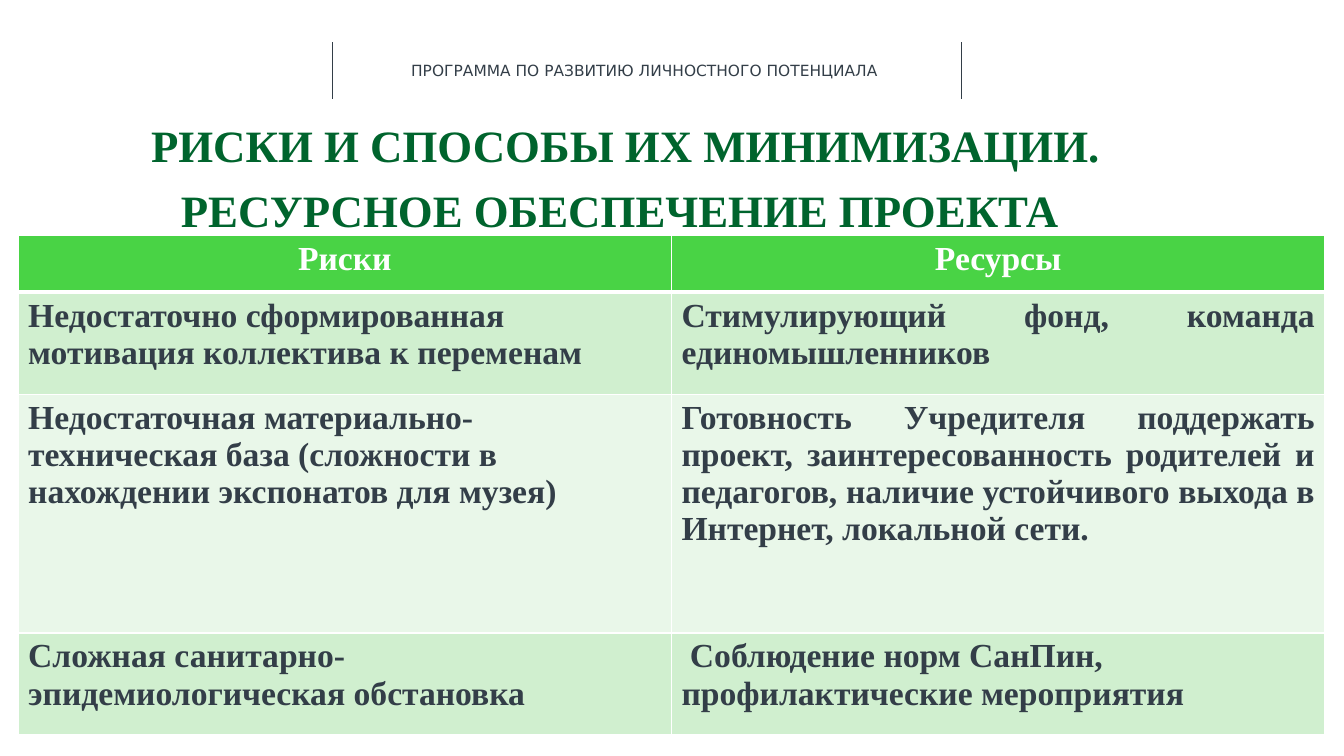
from lxml import etree
from pptx import Presentation
from pptx.dml.color import RGBColor
from pptx.enum.shapes import MSO_CONNECTOR
from pptx.enum.text import PP_ALIGN as Align
from pptx.oxml import parse_xml
from pptx.oxml.ns import nsdecls, qn
from pptx.util import Inches, Pt

SLATE = RGBColor(0x33, 0x3E, 0x48)
DARK_GREEN = RGBColor(0x00, 0x64, 0x2D)
HEADER_GREEN = RGBColor(0x49, 0xD3, 0x45)
BAND_GREEN = RGBColor(0xD0, 0xEF, 0xCF)
PALE_GREEN = RGBColor(0xE9, 0xF7, 0xE9)
WHITE = RGBColor(0xFF, 0xFF, 0xFF)

SERIF = "Times New Roman"
SANS = "DejaVu Sans"

PROGRAM = "ПРОГРАММА ПО РАЗВИТИЮ ЛИЧНОСТНОГО ПОТЕНЦИАЛА"
TITLE = ["РИСКИ И СПОСОБЫ ИХ МИНИМИЗАЦИИ.", "РЕСУРСНОЕ ОБЕСПЕЧЕНИЕ ПРОЕКТА "]
ROWS = [
    (0.56, ["Риски"], ["Ресурсы"]),
    (1.01, ["Недостаточно сформированная", "мотивация коллектива к переменам"],
     ["Стимулирующий фонд, команда единомышленников"]),
    (2.37, ["Недостаточная материально-техническая база "
            "(сложности в нахождении экспонатов для музея)"],
     ["Готовность Учредителя поддержать проект, заинтересованность родителей "
      "и педагогов, наличие устойчивого выхода в Интернет, локальной сети."]),
    (1.01, ["Сложная санитарно-", "эпидемиологическая обстановка"],
     [" Соблюдение норм СанПин,", "профилактические мероприятия"]),
]


def write_text(frame, lines, size, color, font=SERIF, bold=True, align=Align.LEFT, gap=0):
    """Write one paragraph per line, with a gap between paragraphs."""
    frame.word_wrap = True
    for index, line in enumerate(lines):
        paragraph = frame.add_paragraph() if index else frame.paragraphs[0]
        paragraph.alignment = align
        if index:
            paragraph.space_before = Pt(gap)
        run = paragraph.add_run()
        run.text = line
        run.font.name = font
        run.font.size = Pt(size)
        run.font.bold = bold
        run.font.color.rgb = color


def add_program_header(slide, left, top, width, height):
    """Place the program name between two vertical rules."""
    for x in (left, left + width):
        rule = slide.shapes.add_connector(
            MSO_CONNECTOR.STRAIGHT, Inches(x), Inches(top), Inches(x), Inches(top + height))
        rule.line.color.rgb = SLATE
        rule.line.width = Pt(0.5)
        etree.SubElement(rule._element.spPr, qn("a:effectLst"))
    label = slide.shapes.add_textbox(
        Inches(left + 0.68), Inches(top + height / 4), Inches(width - 1.36), Inches(height / 2))
    write_text(label.text_frame, [PROGRAM], 11, SLATE, font=SANS, bold=False)


def add_title(slide, left, top, width, height):
    """Place the two-line centred title."""
    box = slide.shapes.add_textbox(Inches(left), Inches(top), Inches(width), Inches(height))
    frame = box.text_frame
    frame.margin_left = frame.margin_right = frame.margin_top = frame.margin_bottom = 0
    write_text(frame, TITLE, 32, DARK_GREEN, align=Align.CENTER, gap=8)


def set_borders(cell, top, bottom):
    """Draw white borders around a cell, widths in points."""
    properties = cell._tc.get_or_add_tcPr()
    for side, width in (("L", 1), ("R", 1), ("T", top), ("B", bottom)):
        properties.append(parse_xml(
            f'<a:ln{side} {nsdecls("a")} w="{Pt(width)}"><a:solidFill>'
            f'<a:srgbClr val="{WHITE}"/></a:solidFill></a:ln{side}>'))


def add_risk_table(slide, left, top, width, height):
    """Place the table of risks and resources with banded rows."""
    table = slide.shapes.add_table(
        len(ROWS), 2, Inches(left), Inches(top), Inches(width), Inches(height)).table
    for column in table.columns:
        column.width = Inches(width / 2)
    for row, (row_height, *texts) in enumerate(ROWS):
        table.rows[row].height = Inches(row_height)
        header = row == 0
        fill = HEADER_GREEN if header else BAND_GREEN if row % 2 else PALE_GREEN
        for column, lines in enumerate(texts):
            cell = table.cell(row, column)
            set_borders(cell, top=3 if row == 1 else 1, bottom=3 if header else 1)
            cell.fill.solid()
            cell.fill.fore_color.rgb = fill
            align = Align.CENTER if header else Align.JUSTIFY
            if (row, column) == (2, 0):
                align = Align.LEFT
            write_text(cell.text_frame, lines, 24, WHITE if header else SLATE, align=align)


def main():
    """Build and save the slide."""
    presentation = Presentation()
    presentation.slide_width = Inches(13.33)
    presentation.slide_height = Inches(7.5)
    slide = presentation.slides.add_slide(presentation.slide_layouts[6])
    add_program_header(slide, 3.3, 0.42, 6.23, 0.56)
    add_title(slide, 0, 1.17, 12.41, 1.16)
    add_risk_table(slide, 0.18, 2.34, 12.96, sum(row[0] for row in ROWS))
    presentation.save("out.pptx")


if __name__ == "__main__":
    main()
